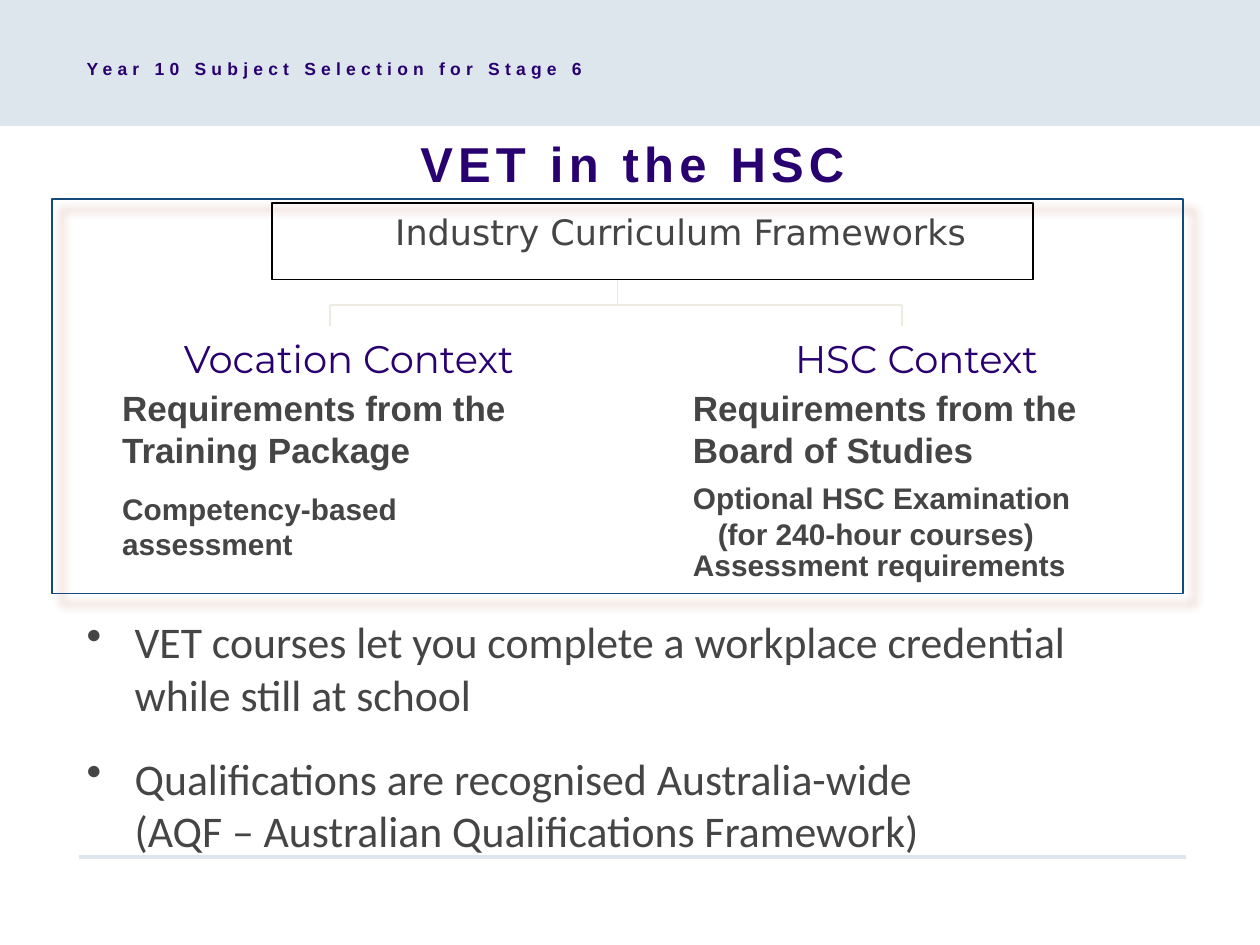
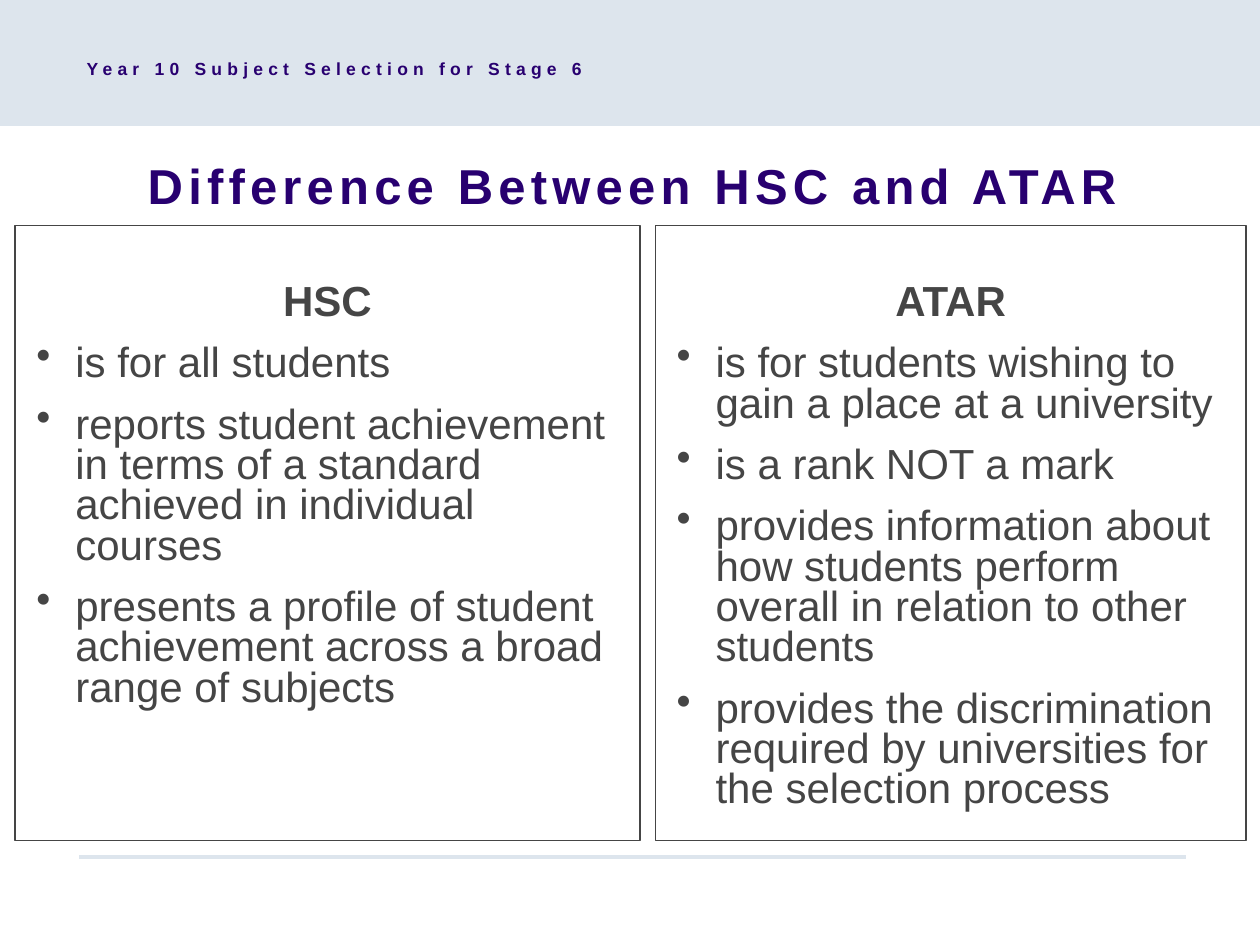
import pptx
import pptx.dml.color
import pptx.enum.shapes
import pptx.enum.text
import pptx.oxml
import pptx.oxml.ns
import pptx.oxml.xmlchemy
import pptx.util

Pt = pptx.util.Pt
SHAPE = pptx.enum.shapes.MSO_SHAPE
ALIGN = pptx.enum.text.PP_ALIGN
ANCHOR = pptx.enum.text.MSO_ANCHOR

PURPLE, GREY, PALE, BLUE, CREAM = "280070", "454545", "DDE5ED", "174A7C", "EEECE1"
BLACK, RUST = "000000", "993300"
SHADOW = (
    f'<a:effectLst {pptx.oxml.ns.nsdecls("a")}>'
    '<a:outerShdw blurRad="63500" dist="107950" dir="2700000" algn="ctr" rotWithShape="0">'
    f'<a:srgbClr val="{RUST}"><a:alpha val="50000"/></a:srgbClr>'
    '</a:outerShdw></a:effectLst>'
)


def rgb(value):
    return pptx.dml.color.RGBColor.from_string(value)


class Deck:
    """Holds the presentation, its style and the slide being filled."""

    def __init__(self):
        self.prs = pptx.Presentation()
        self.prs.slide_width, self.prs.slide_height = Pt(720), Pt(540)
        self.s = None

    def slide(self, title, title_top):
        self.s = self.prs.slides.add_slide(self.prs.slide_layouts[6])
        self.rect(0, 0, 720, 72, fill=PALE)
        self.line(45.4, 489.6, 677.5, 489.6, PALE, 2)
        tf = self.text(42.5, title_top, 638, 43, inset=(7.2, 3.6))
        self.para(tf, title, 28, color=PURPLE, bold=True, align=ALIGN.CENTER, spacing=3)
        tf = self.text(42.5, 29.3, 452, 23, inset=(7.2, 3.6))
        self.para(tf, "Year 10 Subject Selection for Stage 6", 10,
                  color=PURPLE, bold=True, spacing=3)

    def rect(self, x, y, w, h, fill=None, line=None, width=1):
        sp = self.s.shapes.add_shape(SHAPE.RECTANGLE, Pt(x), Pt(y), Pt(w), Pt(h))
        sp.shadow.inherit = False
        if fill:
            sp.fill.solid()
            sp.fill.fore_color.rgb = rgb(fill)
        else:
            sp.fill.background()
        if line:
            sp.line.color.rgb = rgb(line)
            sp.line.width = Pt(width)
        else:
            sp.line.fill.background()
        return sp

    def shadow_frame(self, x, y, w, h, line):
        spPr = self.rect(x, y, w, h, line=line)._element.spPr
        spPr.remove(spPr.find(pptx.oxml.ns.qn("a:effectLst")))
        spPr.append(pptx.oxml.parse_xml(SHADOW))

    def line(self, x1, y1, x2, y2, color, width):
        cn = self.s.shapes.add_connector(
            pptx.enum.shapes.MSO_CONNECTOR.STRAIGHT, Pt(x1), Pt(y1), Pt(x2), Pt(y2))
        cn.line.color.rgb = rgb(color)
        cn.line.width = Pt(width)
        cn._element.spPr.append(pptx.oxml.xmlchemy.OxmlElement("a:effectLst"))

    def text(self, x, y, w, h, inset=(0, 0)):
        tf = self.s.shapes.add_textbox(Pt(x), Pt(y), Pt(w), Pt(h)).text_frame
        return self.frame(tf, *inset)

    def frame(self, tf, side, top):
        tf.word_wrap = True
        tf.vertical_anchor = ANCHOR.TOP
        tf.margin_left = tf.margin_right = Pt(side)
        tf.margin_top, tf.margin_bottom = Pt(top), Pt(0)
        return tf

    def para(self, tf, text, size, font="Arial", color=GREY, bold=False, align=ALIGN.LEFT,
             spacing=0, before=0, after=0, leading=None, indent=0, hanging=0):
        """Add a paragraph; a hanging indent brings a bullet, a newline a line break."""
        p = tf.paragraphs[0]
        if p.runs:
            p = tf.add_paragraph()
            p.space_before = Pt(before)
        pPr = p._p.get_or_add_pPr()
        pPr.set("marL", str(Pt(indent)))
        pPr.set("indent", str(-Pt(hanging)))
        if hanging:
            bullet = pptx.oxml.xmlchemy.OxmlElement("a:buChar")
            bullet.set("char", "•")
            pPr.append(bullet)
        p.alignment = align
        p.space_after = Pt(after)
        if leading:
            p.line_spacing = leading
        for i, part in enumerate(text.split("\n")):
            if i:
                p.add_line_break()
            r = p.add_run()
            r.text = part
            r.font.name, r.font.size, r.font.bold = font, Pt(size), bold
            r.font.color.rgb = rgb(color)
            if spacing:
                r._r.get_or_add_rPr().set("spc", str(spacing * 100))

    def panel(self, x, w, heading, points):
        sp = self.rect(x, 128.9, w, 351.4, line=GREY, width=0.75)
        tf = self.frame(sp.text_frame, 7.2, 33.5)
        self.para(tf, heading, 24, bold=True, align=ALIGN.CENTER, after=6, leading=0.8)
        for point in points:
            self.para(tf, point, 24, before=6, after=6, leading=0.8,
                      indent=27.4, hanging=22.3)


def vet_slide(deck):
    deck.slide("VET in the HSC", 73)
    deck.shadow_frame(29.5, 113.8, 646.6, 225.4, BLUE)

    left, middle, right, branch_y = 188.7, 352.8, 515.5, 174.2
    deck.line(middle, 159.8, middle, branch_y, CREAM, 0.88)
    for x in (left, right):
        deck.line(x, branch_y, x, 186.5, CREAM, 0.88)
        deck.line(x, branch_y, middle, branch_y, CREAM, 0.88)

    columns = [(69.8, 105.1, "Vocation Context", "Training Package"),
               (396, 454.3, "HSC Context", "Board of Studies")]
    for x, heading_x, heading, authority in columns:
        tf = deck.text(heading_x, 191.5, 209, 27)
        deck.para(tf, heading, 22, font="Montserrat", color=PURPLE)
        tf = deck.text(x, 221, 230, 48)
        for row in ("Requirements from the", authority):
            deck.para(tf, row, 20, bold=True)

    tf = deck.text(69.8, 280.3, 224, 40)
    deck.para(tf, "Competency-based assessment", 17, bold=True)
    tf = deck.text(396, 274.3, 230, 41)
    deck.para(tf, "Optional HSC Examination", 17, bold=True)
    deck.para(tf, "(for 240-hour courses)", 17, bold=True, indent=14.2)
    tf = deck.text(396, 312.5, 230, 20)
    deck.para(tf, "Assessment requirements", 17, bold=True)

    tf = deck.text(167, 120.2, 444.2, 24)
    deck.para(tf, "Industry Curriculum Frameworks", 20, font="DejaVu Sans", align=ALIGN.CENTER)
    deck.rect(155.5, 115.9, 434.9, 43.9, line=BLACK, width=0.88)

    tf = deck.text(42.5, 348, 614.2, 156, inset=(7.2, 3.6))
    for point in ("VET courses let you complete a workplace credential while still at school",
                  "Qualifications are recognised Australia-wide\n"
                  "(AQF – Australian Qualifications Framework)"):
        deck.para(tf, point, 25, font="Calibri", before=17.8, indent=27.4, hanging=27.4)


def atar_slide(deck):
    deck.slide("Difference Between HSC and ATAR", 85.5)
    deck.panel(8.6, 357.1, "HSC", [
        "is for all students",
        "reports student achievement in terms of a standard achieved in individual courses",
        "presents a profile of student achievement across a broad range of subjects",
    ])
    deck.panel(374.4, 337.7, "ATAR", [
        "is for students wishing to gain a place at a university",
        "is a rank NOT a mark",
        "provides information about how students perform overall in relation to other students",
        "provides the discrimination required by universities for the selection process",
    ])


def main():
    deck = Deck()
    vet_slide(deck)
    atar_slide(deck)
    deck.prs.save("out.pptx")


if __name__ == "__main__":
    main()
